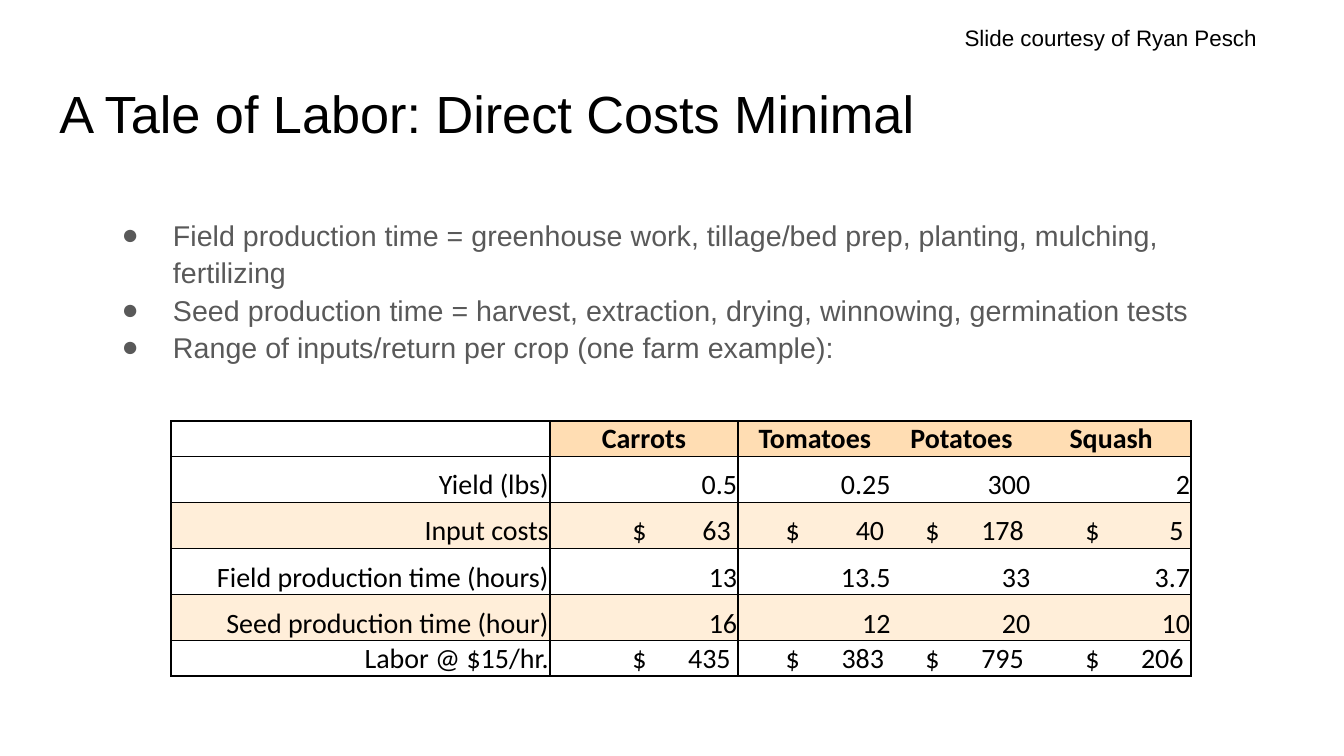
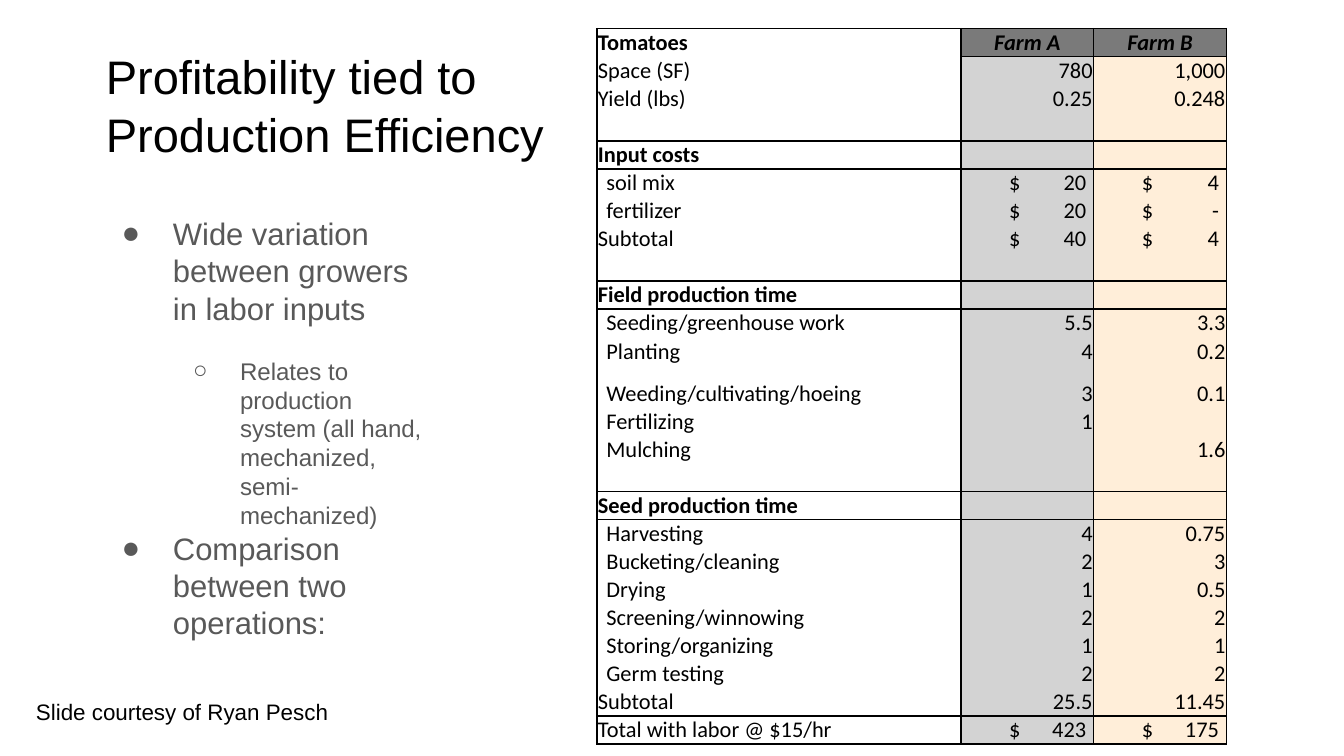
from lxml.etree import SubElement
from pptx import Presentation
from pptx.dml.color import RGBColor
from pptx.enum.text import MSO_ANCHOR as Anchor, MSO_AUTO_SIZE as AutoSize, PP_ALIGN as Align
from pptx.oxml.ns import qn
from pptx.util import Cm, Pt

BLACK = RGBColor(0x00, 0x00, 0x00)
BODY_GREY = RGBColor(0x59, 0x59, 0x59)
HEAD_GREY = RGBColor(0x7A, 0x7A, 0x7A)
COLUMN_GREY = RGBColor(0xD3, 0xD3, 0xD3)
PEACH = RGBColor(0xFF, 0xDD, 0xB3)
PALE_PEACH = RGBColor(0xFF, 0xEE, 0xD9)

TITLE_ONLY = 5
NO_TABLE_STYLE = "{2D5ABB26-0587-4C30-8999-92F81FD0307C}"
CREDIT = "Slide courtesy of Ryan Pesch"
BULLETS = [("●", 1.27, -0.97), ("○", 2.54, -0.89)]  # mark, left margin, indent in cm

CROP_COLUMNS = [7.16, 3.56, 2.9, 2.64, 3.02]
CROP_HEIGHTS = [0.67, 0.87, 0.87, 0.87, 0.87, 0.67]
CROP_ROWS = [
    ("", "Carrots", "Tomatoes", "Potatoes", "Squash"),
    ("Yield (lbs)", "0.5", "0.25", "300", "2"),
    ("Input costs", "$63", "$40", "$178", "$5"),
    ("Field production time (hours)", "13", "13.5", "33", "3.7"),
    ("Seed production time (hour)", "16", "12", "20", "10"),
    ("Labor @ $15/hr.", "$435", "$383", "$795", "$206"),
]

FARM_COLUMNS = [6.88, 2.51, 2.51]
FARM_ROWS = [  # kind, label, farm A, farm B
    ("head", "Tomatoes", "Farm A", "Farm B"),
    ("line", "Space (SF)", "780", "1,000"),
    ("line", "Yield (lbs)", "0.25", "0.248"),
    ("gap", "", "", ""),
    ("head", "Input costs", "", ""),
    ("item", "soil mix", "$20", "$4"),
    ("item", "fertilizer", "$20", "$-"),
    ("line", "Subtotal", "$40", "$4"),
    ("gap", "", "", ""),
    ("head", "Field production time", "", ""),
    ("item", "Seeding/greenhouse work", "5.5", "3.3"),
    ("item", "Planting", "4", "0.2"),
    ("item", "Weeding/cultivating/hoeing", "3", "0.1"),
    ("item", "Fertilizing", "1", ""),
    ("item", "Mulching", "", "1.6"),
    ("gap", "", "", ""),
    ("head", "Seed production time", "", ""),
    ("item", "Harvesting", "4", "0.75"),
    ("item", "Bucketing/cleaning", "2", "3"),
    ("item", "Drying", "1", "0.5"),
    ("item", "Screening/winnowing", "2", "2"),
    ("item", "Storing/organizing", "1", "1"),
    ("item", "Germ testing", "2", "2"),
    ("line", "Subtotal", "25.5", "11.45"),
    ("total", "Total with labor @ $15/hr", "$423", "$175"),
]
TALL_ROW = "Weeding/cultivating/hoeing"


def apply(target, values):
    for name, value in values.items():
        setattr(target, name, value)


class Deck:
    def __init__(self):
        self.deck = Presentation()
        apply(self.deck, {"slide_width": Cm(25.4), "slide_height": Cm(14.29)})
        self.page = None

    def add_page(self, title, at, size):
        self.page = self.deck.slides.add_slide(self.deck.slide_layouts[TITLE_ONLY])
        box = self.page.shapes.title
        apply(box, dict(zip(("left", "top", "width", "height"), map(Cm, at))))
        self.set_frame(box)
        para = box.text_frame.paragraphs[0]
        apply(para, {"alignment": Align.LEFT, "line_spacing": 1.04})
        self.add_span(para, title, size)

    def set_frame(self, box):
        sides = ("margin_left", "margin_right", "margin_top", "margin_bottom")
        apply(box.text_frame, {"word_wrap": True, "auto_size": AutoSize.NONE,
                               "vertical_anchor": Anchor.TOP, **dict.fromkeys(sides, Cm(0.25))})

    def add_span(self, para, text, size, font="Arial", color=BLACK, bold=False, italic=False):
        span = para.add_run()
        span.text = text
        apply(span.font, {"name": font, "size": Pt(size), "bold": bold, "italic": italic})
        span.font.color.rgb = color

    def add_bullets(self, at, lines, spacing):
        """Each line is (level, size, space before, text)."""
        box = self.page.shapes.add_textbox(*map(Cm, at))
        self.set_frame(box)
        for index, (level, size, before, text) in enumerate(lines):
            para = box.text_frame.add_paragraph() if index else box.text_frame.paragraphs[0]
            apply(para, {"level": level, "line_spacing": spacing, "space_before": Pt(before)})
            mark, margin, indent = BULLETS[level]
            props = para._p.get_or_add_pPr()
            props.set("marL", str(Cm(margin)))
            props.set("indent", str(Cm(indent)))
            color = SubElement(props, qn("a:buClr"))
            SubElement(color, qn("a:srgbClr"), val=str(BODY_GREY))
            SubElement(props, qn("a:buFont"), typeface="Arial")
            SubElement(props, qn("a:buChar"), char=mark)
            self.add_span(para, text, size, color=BODY_GREY)

    def add_credit(self, left, top):
        box = self.page.shapes.add_textbox(Cm(left), Cm(top), Cm(6.1), Cm(0.76))
        apply(box.text_frame, {"word_wrap": False, "auto_size": AutoSize.SHAPE_TO_FIT_TEXT})
        self.add_span(box.text_frame.paragraphs[0], CREDIT, 12)

    def add_table(self, left, top, columns, heights):
        shape = self.page.shapes.add_table(len(heights), len(columns), Cm(left), Cm(top),
                                           Cm(sum(columns)), Cm(sum(heights)))
        table = shape.table
        apply(table, {"first_row": False, "horz_banding": False})
        table._tbl.tblPr.find(qn("a:tableStyleId")).text = NO_TABLE_STYLE
        for column, width in zip(table.columns, columns):
            column.width = Cm(width)
        for row, height in zip(table.rows, heights):
            row.height = Cm(height)
        return table

    def fill_cell(self, cell, text, size, align, fill=None, borders="", inset=0.02, **look):
        apply(cell, {"vertical_anchor": Anchor.BOTTOM, "margin_left": Cm(inset),
                     "margin_right": Cm(0.02), "margin_top": Cm(0.01), "margin_bottom": 0})
        para = cell.text_frame.paragraphs[0]
        para.alignment = align
        if text:
            self.add_span(para, text, size, "Calibri", **look)
        else:
            para._p.get_or_add_endParaRPr().set("sz", str(size * 100))
        props = cell._tc.get_or_add_tcPr()
        for side in "LRTB":
            if side in borders:
                line = SubElement(props, qn(f"a:ln{side}"), w=str(Pt(1)))
                ink = SubElement(line, qn("a:solidFill"))
                SubElement(ink, qn("a:srgbClr"), val=str(BLACK))
        if fill is None:
            cell.fill.background()
        else:
            cell.fill.solid()
            cell.fill.fore_color.rgb = fill

    def fill_figure(self, cell, text, size, width, sign_gap, **look):
        """Right-align a number; set a dollar sign apart from its amount with a tab."""
        if not text.startswith("$"):
            self.fill_cell(cell, text, size, Align.RIGHT, **look)
            return
        self.fill_cell(cell, "$\t" + text[1:], size, Align.LEFT, inset=width - sign_gap, **look)
        props = cell.text_frame.paragraphs[0]._p.get_or_add_pPr()
        stops = SubElement(props, qn("a:tabLst"))
        SubElement(stops, qn("a:tab"), pos=str(Cm(sign_gap - 0.14)), algn="r")


def add_crop_table(deck):
    table = deck.add_table(3.23, 7.96, CROP_COLUMNS, CROP_HEIGHTS)
    last = len(CROP_COLUMNS) - 1
    for row, values in enumerate(CROP_ROWS):
        for col, text in enumerate(values):
            look = {"fill": PALE_PEACH if row in (2, 4) else None,
                    "borders": "TB" + "L" * (col < 2) + "R" * (col in (0, last))}
            cell = table.cell(row, col)
            if row == 0 and col:
                look["fill"] = PEACH
                deck.fill_cell(cell, text, 15, Align.CENTER, bold=True, **look)
            elif col == 0:
                deck.fill_cell(cell, text, 15, Align.RIGHT, **look)
            else:
                deck.fill_figure(cell, text, 15, CROP_COLUMNS[col], 2.0, **look)


def add_farm_table(deck):
    heights = [0.8 if label == TALL_ROW else 0.53 for _, label, *_ in FARM_ROWS]
    table = deck.add_table(11.28, 0.54, FARM_COLUMNS, heights)
    for row, (kind, label, *figures) in enumerate(FARM_ROWS):
        ends_block = kind in ("gap", "total") or FARM_ROWS[row + 1][0] == "total"
        borders = "LR" + "T" * (kind in ("head", "total")) + "B" * ends_block
        deck.fill_cell(table.cell(row, 0), label, 12, Align.LEFT, borders=borders,
                       inset=0.18 if kind == "item" else 0.02, bold=kind == "head")
        for col, text in enumerate(figures, 1):
            cell = table.cell(row, col)
            if row == 0:
                deck.fill_cell(cell, text, 12, Align.CENTER, HEAD_GREY, "LRTB",
                               bold=True, italic=True)
            else:
                deck.fill_figure(cell, text, 12, FARM_COLUMNS[col], 1.6, borders=borders,
                                 fill=(COLUMN_GREY, PALE_PEACH)[col - 1])


def main():
    deck = Deck()

    deck.add_page("A Tale of Labor: Direct Costs Minimal", (0.87, 1.24, 23.67, 1.6), 28)
    deck.add_bullets((1.75, 3.81, 22.25, 3.81), [
        (0, 15.3, 0, "Field production time = greenhouse work, tillage/bed prep, planting, "
                     "mulching, fertilizing"),
        (0, 15.3, 0, "Seed production time = harvest, extraction, drying, winnowing, "
                     "germination tests"),
        (0, 15.3, 0, "Range of inputs/return per crop (one farm example):"),
    ], 1.09)
    add_crop_table(deck)
    deck.add_credit(17.98, 0.33)

    deck.add_page("Profitability tied to Production Efficiency", (1.75, 0.6, 9, 2.77), 25.2)
    deck.add_bullets((1.75, 3.81, 6.5, 9.07), [
        (0, 16.6, 0, "Wide variation between growers in labor inputs"),
        (1, 12.9, 16, "Relates to production system (all hand, mechanized, semi-mechanized)"),
        (0, 16.6, 0, "Comparison between two operations:"),
    ], 1.0)
    add_farm_table(deck)
    deck.add_credit(0.43, 13.08)

    deck.deck.save("out.pptx")


if __name__ == "__main__":
    main()
